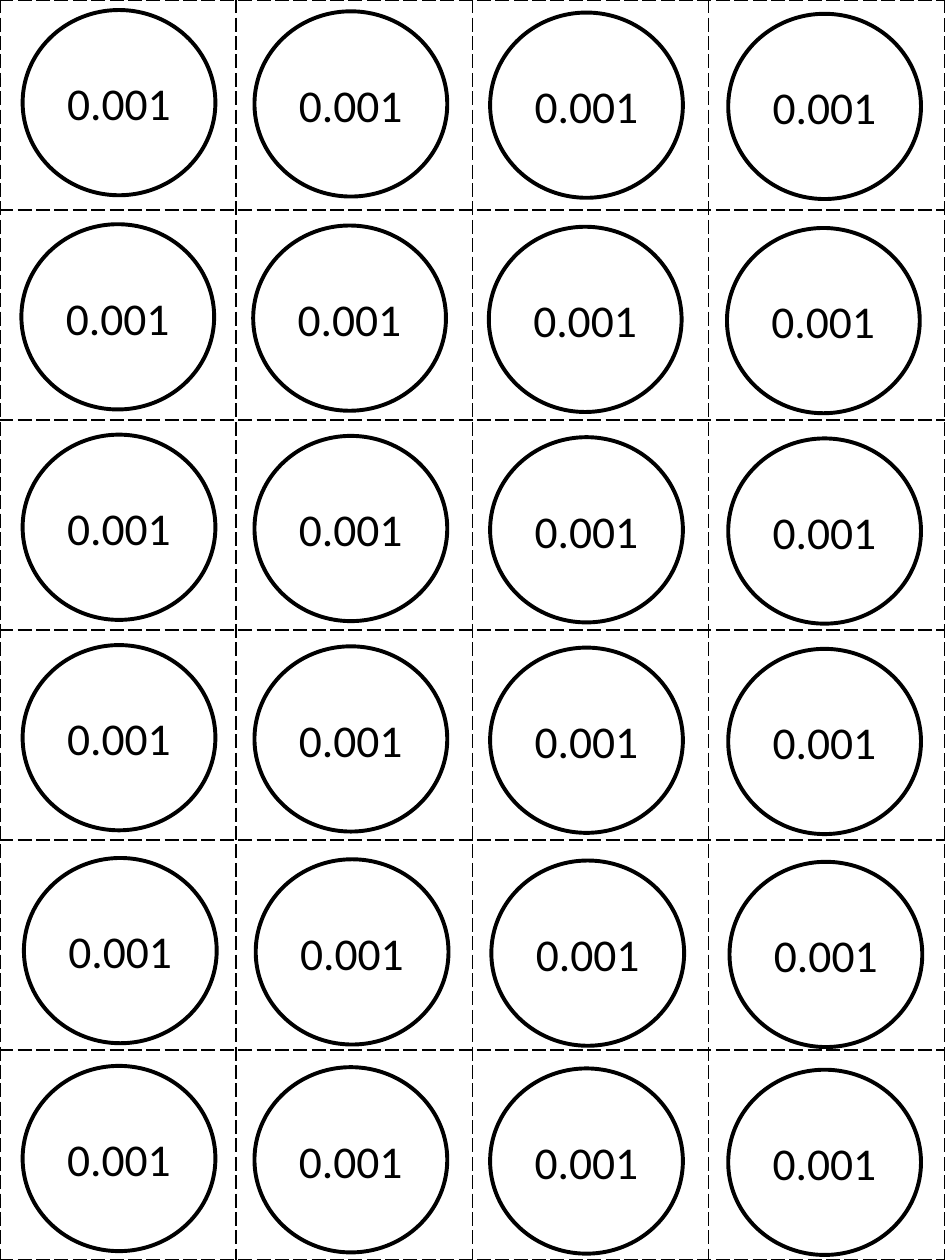
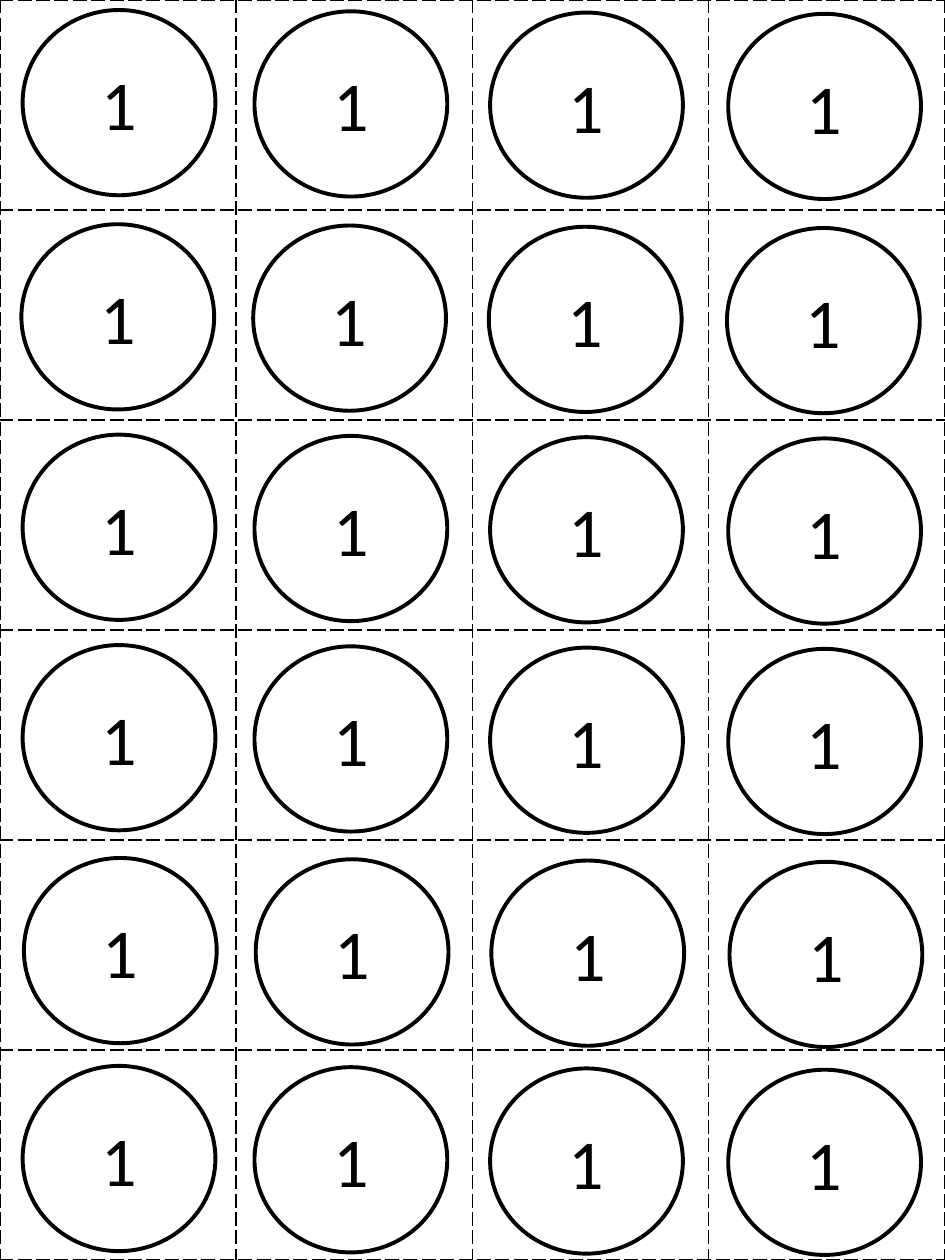
from lxml.etree import SubElement
from pptx import Presentation
from pptx.dml.color import RGBColor
from pptx.enum.shapes import MSO_SHAPE as Preset
from pptx.enum.text import MSO_ANCHOR as Anchor, PP_ALIGN as Align
from pptx.oxml.ns import qn
from pptx.util import Inches, Pt

COUNTER_SHEETS = [("0.001", 26), ("1", 40)]

BLACK = RGBColor(0x00, 0x00, 0x00)
WHITE = RGBColor(0xFF, 0xFF, 0xFF)
FONT = "Calibri"

PAGE_WIDTH, PAGE_HEIGHT = 7.5, 10
COUNTER_WIDTH, COUNTER_HEIGHT = 1.53, 1.47
COLUMN_LEFTS = [0.18, 2.02, 3.89, 5.78]
ROW_TOPS = [0.08, 1.78, 3.45, 5.12, 6.81, 8.46]
ROW_SHIFTS = [0, -0.01, 0, 0, 0.01, 0]
COLUMN_DROP = 0.01
COLUMNS, ROWS = len(COLUMN_LEFTS), len(ROW_TOPS)


def write_text(shape, text, size, color=BLACK, font=FONT, align=Align.CENTER):
    frame = shape.text_frame
    frame.word_wrap = True
    frame.vertical_anchor = Anchor.MIDDLE
    paragraph = frame.paragraphs[0]
    paragraph.alignment = align
    run = paragraph.add_run()
    run.text = text
    run.font.size = Pt(size)
    run.font.name = font
    run.font.color.rgb = color


def dash_borders(cell, color=BLACK, width=1):
    properties = cell._tc.get_or_add_tcPr()
    for side in ("lnL", "lnR", "lnT", "lnB"):
        line = SubElement(properties, qn(f"a:{side}"), w=str(Pt(width)))
        fill = SubElement(line, qn("a:solidFill"))
        SubElement(fill, qn("a:srgbClr"), val=str(color))
        SubElement(line, qn("a:prstDash"), val="lgDash")


def add_cutting_grid(slide):
    table = slide.shapes.add_table(
        ROWS, COLUMNS, 0, 0, Inches(PAGE_WIDTH), Inches(PAGE_HEIGHT)
    ).table
    table.first_row = False
    table.horz_banding = False
    for cell in table.iter_cells():
        dash_borders(cell)
        cell.fill.background()


def add_counter(slide, left, top, text, size):
    counter = slide.shapes.add_shape(
        Preset.OVAL, Inches(left), Inches(top),
        Inches(COUNTER_WIDTH), Inches(COUNTER_HEIGHT),
    )
    counter.shadow.inherit = False
    counter.fill.solid()
    counter.fill.fore_color.rgb = WHITE
    counter.line.color.rgb = BLACK
    counter.line.width = Pt(2.25)
    write_text(counter, text, size)


def add_sheet(presentation, text, size):
    slide = presentation.slides.add_slide(presentation.slide_layouts[6])
    add_cutting_grid(slide)
    for top, shift in zip(ROW_TOPS, ROW_SHIFTS):
        for column, left in enumerate(COLUMN_LEFTS):
            add_counter(slide, left + shift, top + column * COLUMN_DROP, text, size)


def main():
    presentation = Presentation()
    presentation.slide_width = Inches(PAGE_WIDTH)
    presentation.slide_height = Inches(PAGE_HEIGHT)
    for text, size in COUNTER_SHEETS:
        add_sheet(presentation, text, size)
    presentation.save("out.pptx")


if __name__ == "__main__":
    main()
